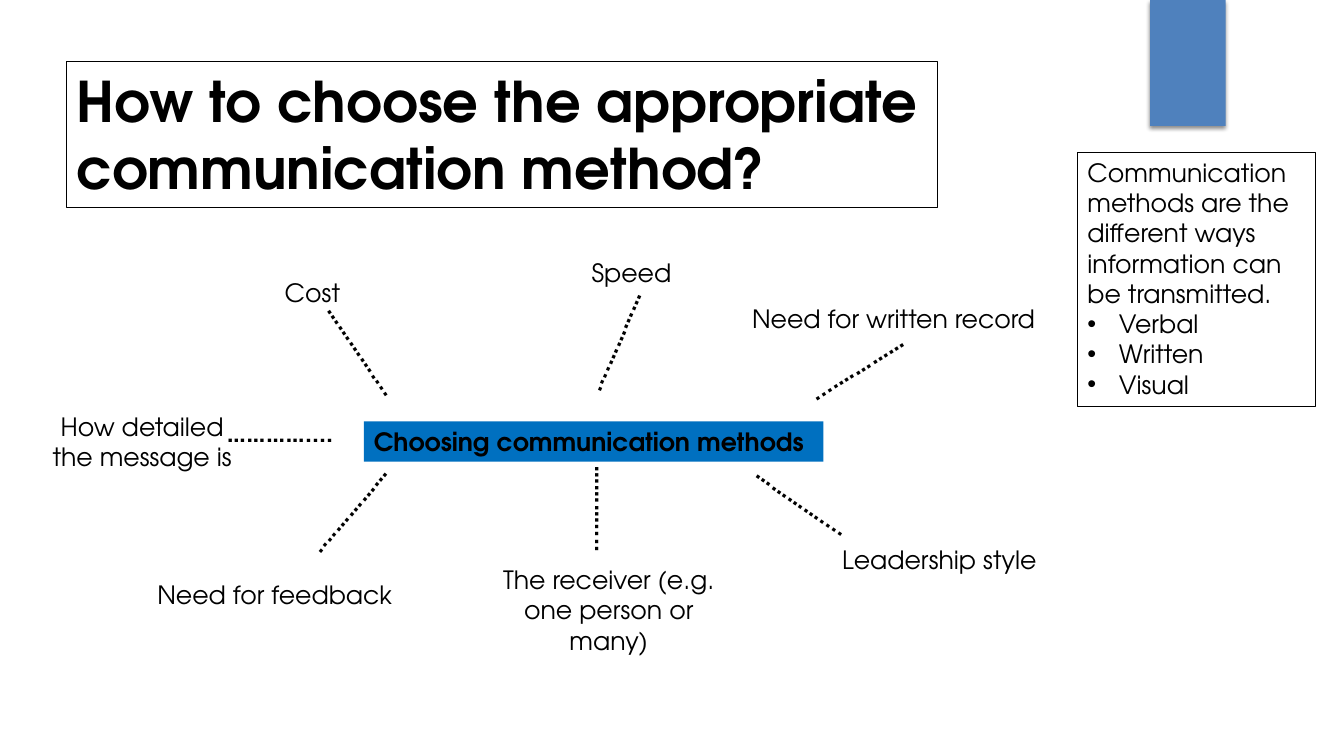
import pptx
import pptx.util
from lxml import etree
from pptx.dml.color import RGBColor
from pptx.enum.shapes import MSO_SHAPE
from pptx.enum.text import MSO_ANCHOR, MSO_AUTO_SIZE, PP_ALIGN
from pptx.oxml import parse_xml
from pptx.oxml.ns import nsdecls, qn
from pptx.util import Pt

BLACK = RGBColor(0x00, 0x00, 0x00)
TAB_BLUE = RGBColor(0x4F, 0x81, 0xBD)
HUB_BLUE = RGBColor(0x00, 0x70, 0xC0)
FONT = "TeX Gyre Adventor"
LINE_HEIGHT = 28.8

# Places are left, top, width, height in points.
TAB_PLACE = (821.5, 0, 54, 90)
TITLE = ("How to choose the appropriate communication method?", (47.5, 43.9, 622.1, 104.4))
HUB = ("Choosing communication methods", (259.9, 301, 328.3, LINE_HEIGHT))
DEFINITION = "Communication methods are the different ways information can be transmitted."
METHODS = ["Verbal", "Written", "Visual"]
DEFINITION_PLACE = (769.7, 108.7, 169.9, 181.4)

FACTORS = [
    (["Cost"], (193.7, 194.4, 59, LINE_HEIGHT)),
    (["Speed"], (409, 180, 84.2, LINE_HEIGHT)),
    (["Need for written record"], (522, 213.1, 232.6, LINE_HEIGHT)),
    (["How detailed", "the message is"], (24.5, 290.2, 154.1, 51.1)),
    (["Need for feedback"], (99.4, 410.4, 193.7, LINE_HEIGHT)),
    (["The receiver (e.g. one person or many)"], (347, 399.6, 175.7, 72.7)),
    (["Leadership style"], (594, 385.2, 154.1, LINE_HEIGHT)),
]

LONG_DOTS = "…………...."
SHORT_DOTS = "………...."
DOTS_WIDTH = 120.2
SPOKES = [  # dots, left, top, rotation in degrees
    (LONG_DOTS, 208.8, 247, 55.8),
    (LONG_DOTS, 382.3, 247, 113.5),
    (LONG_DOTS, 545, 264.2, 148),
    (LONG_DOTS, 154.8, 294.5, 0),
    (LONG_DOTS, 187.2, 367.2, 130.4),
    (LONG_DOTS, 526.3, 350.6, 34.7),
    (SHORT_DOTS, 372.2, 370.8, 90),
]


def add_box(slide, place, fill=None, line=None):
    box = slide.shapes.add_shape(MSO_SHAPE.RECTANGLE, *map(Pt, place))
    box.shadow.inherit = False
    if fill is None:
        box.fill.background()
    else:
        box.fill.solid()
        box.fill.fore_color.rgb = fill
    if line is None:
        box.line.fill.background()
    else:
        box.line.color.rgb = line
        box.line.width = Pt(0.75)
    return box


def add_bullet(para):
    props = para._p.get_or_add_pPr()
    props.set("marL", str(Pt(22.5)))
    props.set("indent", str(-Pt(22.5)))
    etree.SubElement(props, qn("a:buFont")).set("typeface", "Arial")
    etree.SubElement(props, qn("a:buChar")).set("char", "•")


def write(box, lines, size=18, bold=False, align=PP_ALIGN.LEFT, bullets=()):
    frame = box.text_frame
    frame_format = {"word_wrap": True, "vertical_anchor": MSO_ANCHOR.TOP,
                    "auto_size": MSO_AUTO_SIZE.SHAPE_TO_FIT_TEXT}
    for name, value in frame_format.items():
        setattr(frame, name, value)
    for index, line in enumerate([*lines, *bullets]):
        para = frame.paragraphs[0] if index == 0 else frame.add_paragraph()
        para.alignment = align
        if index >= len(lines):
            add_bullet(para)
        span = para.add_run()
        span.text = line
        for name, value in {"name": FONT, "size": Pt(size), "bold": bold}.items():
            setattr(span.font, name, value)
        span.font.color.rgb = BLACK


def add_drop_shadow(box):
    effects = box._element.spPr.find(qn("a:effectLst"))
    effects.append(parse_xml(
        f'<a:outerShdw {nsdecls("a")} blurRad="{Pt(3)}" dist="{Pt(2)}" dir="5400000" '
        'rotWithShape="0"><a:srgbClr val="000000"><a:alpha val="45000"/></a:srgbClr>'
        '</a:outerShdw>'))


def main():
    deck = pptx.Presentation()
    deck.slide_width, deck.slide_height = Pt(960), Pt(540)
    page = deck.slides.add_slide(deck.slide_layouts[6])

    add_drop_shadow(add_box(page, TAB_PLACE, fill=TAB_BLUE))
    title, title_place = TITLE
    write(add_box(page, title_place, line=BLACK), [title], size=40, bold=True)
    write(add_box(page, DEFINITION_PLACE, line=BLACK), [DEFINITION], bullets=METHODS)
    hub, hub_place = HUB
    write(add_box(page, hub_place, fill=HUB_BLUE), [hub], bold=True)

    for lines, place in FACTORS:
        write(page.shapes.add_textbox(*map(Pt, place)), lines, align=PP_ALIGN.CENTER)

    for dots, left, top, rotation in SPOKES:
        spoke = page.shapes.add_textbox(*map(Pt, (left, top, DOTS_WIDTH, LINE_HEIGHT)))
        spoke.rotation = rotation
        write(spoke, [dots], bold=True)

    deck.save("out.pptx")


if __name__ == "__main__":
    main()
